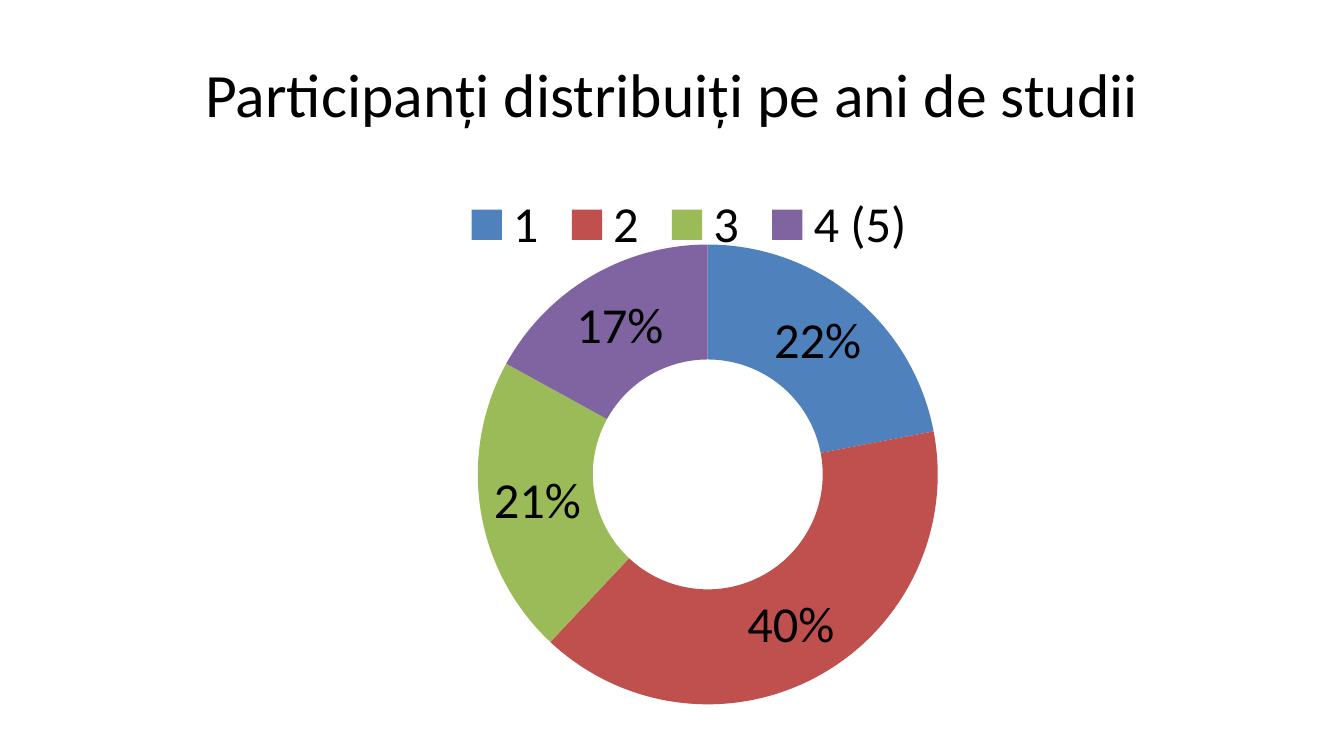
import lxml.etree
import pptx
import pptx.chart.data
import pptx.dml.color
import pptx.enum.chart
import pptx.enum.text
import pptx.oxml.ns
import pptx.util

WIDTH, HEIGHT = 13.33, 7.5
FONT = "Calibri"
COLOURS = {
    "text": "000000",
    "1": "4F81BD",
    "2": "C0504D",
    "3": "9BBB59",
    "4 (5)": "8064A2",
}
YEAR_SHARES = {"1": 22, "2": 40, "3": 21, "4 (5)": 17}
TITLE_BOX = (0.67, 0.3, 12, 1.25)
CHART_BOX = (0.67, 1.75, 12.33, 5.58)
RING_LAYOUT = {"x": 0.33, "y": 0.12, "w": 0.37, "h": 0.82}


def colour(name):
    return pptx.dml.color.RGBColor.from_string(COLOURS[name])


def set_font(font, size):
    font.name = FONT
    font.size = pptx.util.Pt(size)
    font.bold = False
    font.color.rgb = colour("text")


def place_title(page, box, text):
    title = page.shapes.title
    title.left, title.top, title.width, title.height = map(pptx.util.Inches, box)
    frame = title.text_frame
    frame.text = text
    frame.word_wrap = True
    frame.vertical_anchor = pptx.enum.text.MSO_ANCHOR.MIDDLE
    para = frame.paragraphs[0]
    para.alignment = pptx.enum.text.PP_ALIGN.CENTER
    set_font(para.font, 44)


def set_plot_layout(chart, shares):
    """Fix the inner plot area at the given shares of the chart's size."""
    qn = pptx.oxml.ns.qn
    plot_area = chart.element.find(".//" + qn("c:plotArea"))
    for old_layout in plot_area.findall(qn("c:layout")):
        plot_area.remove(old_layout)
    layout = lxml.etree.Element(qn("c:layout"))
    manual = lxml.etree.SubElement(layout, qn("c:manualLayout"))
    settings = {"layoutTarget": "inner", "xMode": "edge", "yMode": "edge", **shares}
    for tag, value in settings.items():
        lxml.etree.SubElement(manual, qn("c:" + tag)).set("val", str(value))
    plot_area.insert(0, layout)


def place_year_chart(page, box):
    data = pptx.chart.data.CategoryChartData()
    data.categories = list(YEAR_SHARES)
    data.add_series("Series 1", list(YEAR_SHARES.values()))
    chart = page.shapes.add_chart(
        pptx.enum.chart.XL_CHART_TYPE.DOUGHNUT, *map(pptx.util.Inches, box), data
    ).chart
    set_font(chart.font, 36)
    chart.has_title = False
    chart.has_legend = True
    chart.legend.position = pptx.enum.chart.XL_LEGEND_POSITION.TOP
    chart.legend.include_in_layout = False

    plot = chart.plots[0]
    plot.vary_by_categories = True
    for index, year in enumerate(YEAR_SHARES):
        fill = plot.series[0].points[index].format.fill
        fill.solid()
        fill.fore_color.rgb = colour(year)

    plot.has_data_labels = True
    labels = plot.data_labels
    labels.show_percentage = True
    labels.show_value = False
    labels.number_format = "0%"
    labels.number_format_is_linked = False
    set_font(labels.font, 36)
    set_plot_layout(chart, RING_LAYOUT)


def main():
    deck = pptx.Presentation()
    deck.slide_width = pptx.util.Inches(WIDTH)
    deck.slide_height = pptx.util.Inches(HEIGHT)
    page = deck.slides.add_slide(deck.slide_layouts.get_by_name("Title Only"))
    place_title(page, TITLE_BOX, "Participanți distribuiți pe ani de studii")
    place_year_chart(page, CHART_BOX)
    deck.save("out.pptx")


if __name__ == "__main__":
    main()
